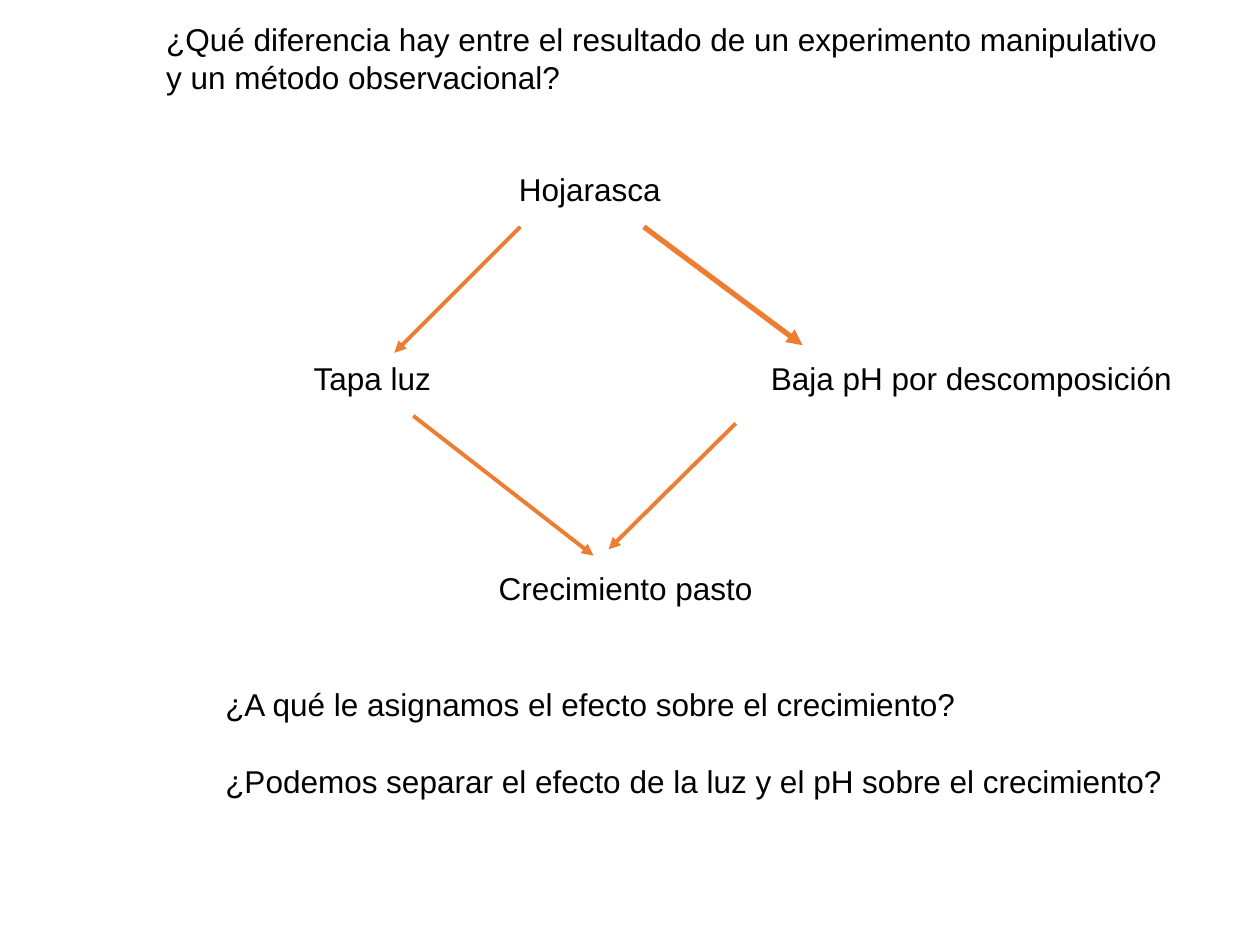
from lxml import etree
from pptx import Presentation
from pptx.dml.color import RGBColor
from pptx.enum.shapes import MSO_CONNECTOR
from pptx.enum.text import MSO_AUTO_SIZE
from pptx.oxml.ns import qn
from pptx.util import Inches, Pt

STRAIGHT = MSO_CONNECTOR.STRAIGHT
FIT_SHAPE = MSO_AUTO_SIZE.SHAPE_TO_FIT_TEXT
FONT = "Arial"
BLACK = "000000"
ORANGE = "ED7D31"

HEADING = (
    "¿Qué diferencia hay entre el resultado de un experimento "
    "manipulativo y un método observacional?"
)
QUESTIONS = [
    "¿A qué le asignamos el efecto sobre el crecimiento?",
    "¿Podemos separar el efecto de la luz y el pH sobre el crecimiento?",
]
NODES = [
    ("Hojarasca", 4.02, 1.3, 1.67),
    ("Tapa luz", 2.39, 2.8, 1.95),
    ("Baja pH por descomposición", 6.02, 2.8, 3.63),
    ("Crecimiento pasto", 3.86, 4.47, 2.28),
]
ARROWS = [
    ((4.13, 1.8), (3.13, 2.8), 2.25),
    ((5.11, 1.8), (6.37, 2.74), 3),
    ((3.28, 3.3), (4.71, 4.41), 2.25),
    ((5.84, 3.36), (4.83, 4.36), 2.25),
]


def color(value):
    return RGBColor.from_string(value)


def add_text(s, paragraphs, left, top, width, height=0.4, gap=0):
    box = s.shapes.add_textbox(
        Inches(left), Inches(top), Inches(width), Inches(height)
    )
    tf = box.text_frame
    tf.word_wrap = True
    tf.auto_size = FIT_SHAPE
    for i, text in enumerate(paragraphs):
        p = tf.add_paragraph() if i else tf.paragraphs[0]
        p.text = text
        p.font.name = FONT
        p.font.size = Pt(18)
        p.font.color.rgb = color(BLACK)
        if i:
            p.space_before = Pt(gap)


def add_arrow(s, start, end, weight):
    points = [Inches(v) for v in start + end]
    arrow = s.shapes.add_connector(STRAIGHT, *points)
    arrow.line.color.rgb = color(ORANGE)
    arrow.line.width = Pt(weight)
    etree.SubElement(arrow.line._get_or_add_ln(), qn("a:tailEnd"), type="triangle")
    etree.SubElement(arrow._element.spPr, qn("a:effectLst"))


def main():
    prs = Presentation()
    prs.slide_width, prs.slide_height = Inches(10), Inches(7.5)
    s = prs.slides.add_slide(prs.slide_layouts[6])
    for label, left, top, width in NODES:
        add_text(s, [label], left, top, width)
    for start, end, weight in ARROWS:
        add_arrow(s, start, end, weight)
    add_text(s, QUESTIONS, 1.69, 5.39, 7.87, 1.01, gap=22)
    add_text(s, [HEADING], 1.22, 0.11, 8.19, 0.71)
    prs.save("out.pptx")


if __name__ == "__main__":
    main()
